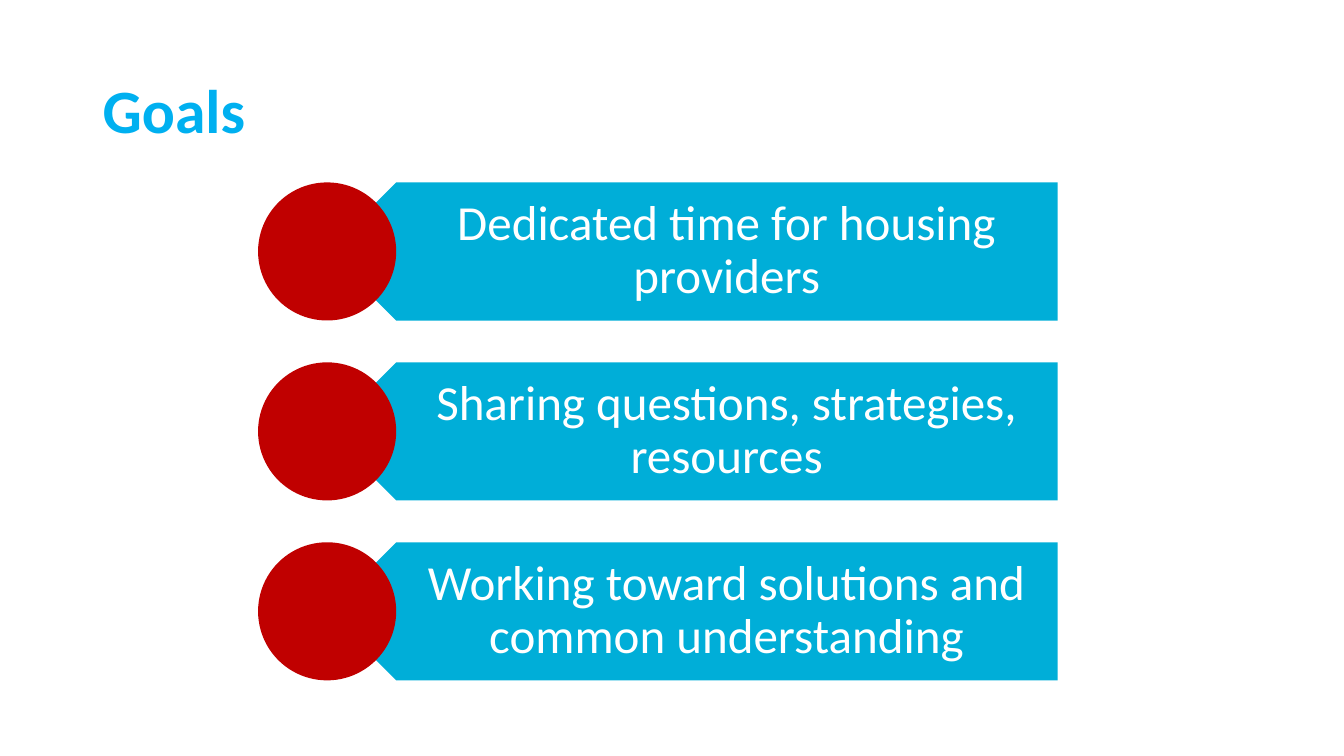
from dataclasses import dataclass

from pptx import Presentation
from pptx.dml.color import RGBColor
from pptx.enum.shapes import MSO_SHAPE
from pptx.enum.text import MSO_ANCHOR, PP_ALIGN
from pptx.util import Inches, Pt


@dataclass(frozen=True)
class Theme:
    """Colours, font and type sizes of the deck."""
    title: RGBColor = RGBColor(0x00, 0xB0, 0xF0)
    banner: RGBColor = RGBColor(0x00, 0xAE, 0xD8)
    disc: RGBColor = RGBColor(0xC0, 0x00, 0x00)
    banner_text: RGBColor = RGBColor(0xFF, 0xFF, 0xFF)
    font: str = "Calibri"
    title_size: int = 44
    banner_size: int = 35


@dataclass(frozen=True)
class Box:
    """A rectangle in inches."""
    left: float
    top: float
    width: float
    height: float

    def emu(self):
        """Return the four lengths in slide units."""
        return [Inches(n) for n in (self.left, self.top, self.width, self.height)]


THEME = Theme()
SLIDE_WIDTH, SLIDE_HEIGHT = 13.33, 7.5
TITLE_BOX = Box(0.92, 0.4, 11.5, 1.45)
GOALS_BOX = Box(2.56, 1.81, 7.93, 4.94)
ROW_SHARE = 1.37 / 4.94
TEXT_INSETS = (0.61, 0.15, 0.27, 0.15)
GOALS = (
    "Dedicated time for housing providers",
    "Sharing questions, strategies, resources",
    "Working toward solutions and common understanding",
)


def add_text(page, box, words, size, colour, bold=False,
             align=PP_ALIGN.LEFT, insets=(0.1, 0.05, 0.1, 0.05)):
    """Place one vertically centred paragraph in the box."""
    frame = page.shapes.add_textbox(*box.emu()).text_frame
    frame.word_wrap = True
    frame.vertical_anchor = MSO_ANCHOR.MIDDLE
    (frame.margin_left, frame.margin_top,
     frame.margin_right, frame.margin_bottom) = [Inches(n) for n in insets]
    para = frame.paragraphs[0]
    para.alignment = align
    para.line_spacing = 0.9
    span = para.add_run()
    span.text = words
    span.font.name = THEME.font
    span.font.size = Pt(size)
    span.font.bold = bold
    span.font.color.rgb = colour


def add_plain_shape(page, kind, box, colour):
    """Place a flat preset shape without an outline."""
    shape = page.shapes.add_shape(kind, *box.emu())
    shape.shadow.inherit = False
    shape.fill.solid()
    shape.fill.fore_color.rgb = colour
    shape.line.fill.background()
    return shape


def add_goal(page, box, words):
    """Place a banner pointing left, its text and the disc over its tip."""
    radius = box.height / 2
    banner = Box(box.left + radius, box.top, box.width - radius, box.height)
    label = Box(banner.left + radius / 2, box.top, banner.width - radius / 2, box.height)
    disc = Box(box.left, box.top, box.height, box.height)
    add_plain_shape(page, MSO_SHAPE.PENTAGON, banner, THEME.banner).rotation = 180
    add_text(page, label, words, THEME.banner_size, THEME.banner_text,
             align=PP_ALIGN.CENTER, insets=TEXT_INSETS)
    add_plain_shape(page, MSO_SHAPE.OVAL, disc, THEME.disc)


def add_goal_list(page, box, goals):
    """Spread the goals evenly from the top to the bottom of the box."""
    height = box.height * ROW_SHARE
    pitch = (box.height - height) / (len(goals) - 1)
    for index, words in enumerate(goals):
        add_goal(page, Box(box.left, box.top + index * pitch, box.width, height), words)


def main():
    """Build and save the deck."""
    deck = Presentation()
    deck.slide_width, deck.slide_height = Inches(SLIDE_WIDTH), Inches(SLIDE_HEIGHT)
    page = deck.slides.add_slide(deck.slide_layouts[6])
    add_text(page, TITLE_BOX, "Goals", THEME.title_size, THEME.title, bold=True)
    add_goal_list(page, GOALS_BOX, GOALS)
    deck.save("out.pptx")


if __name__ == "__main__":
    main()
